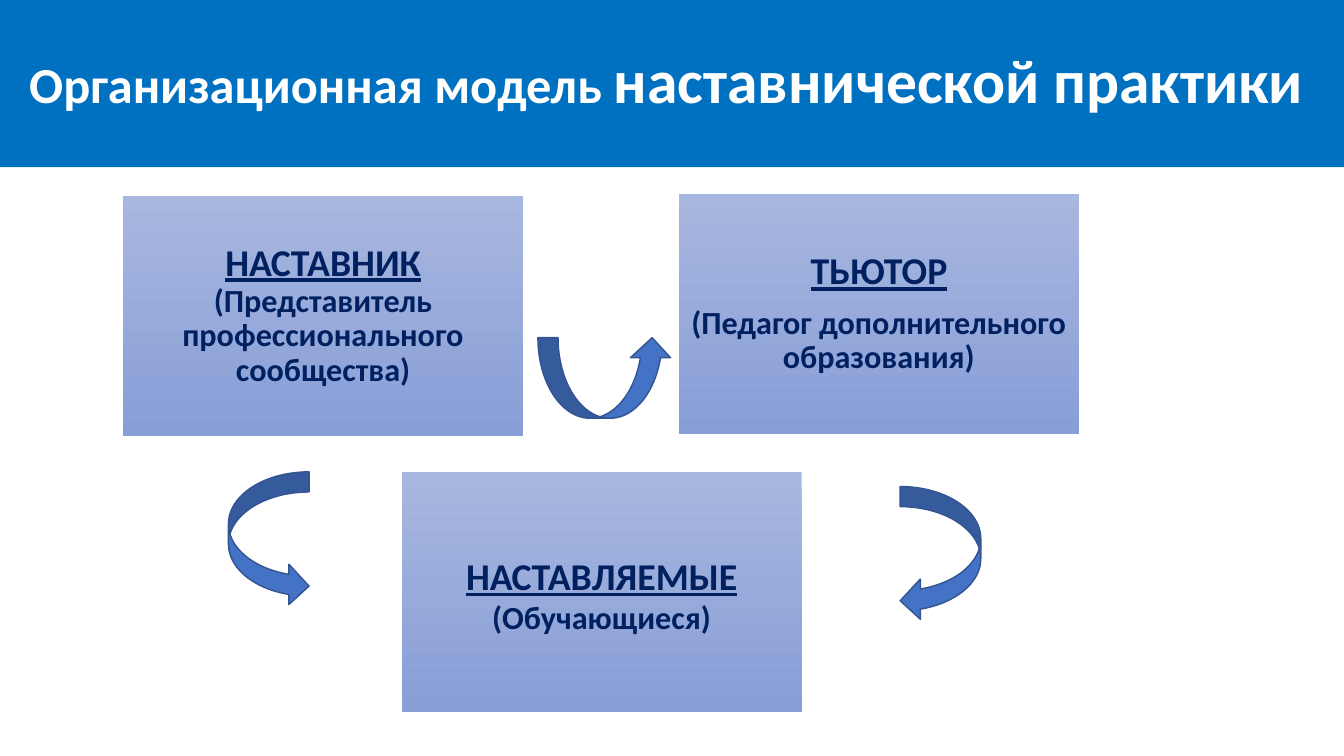
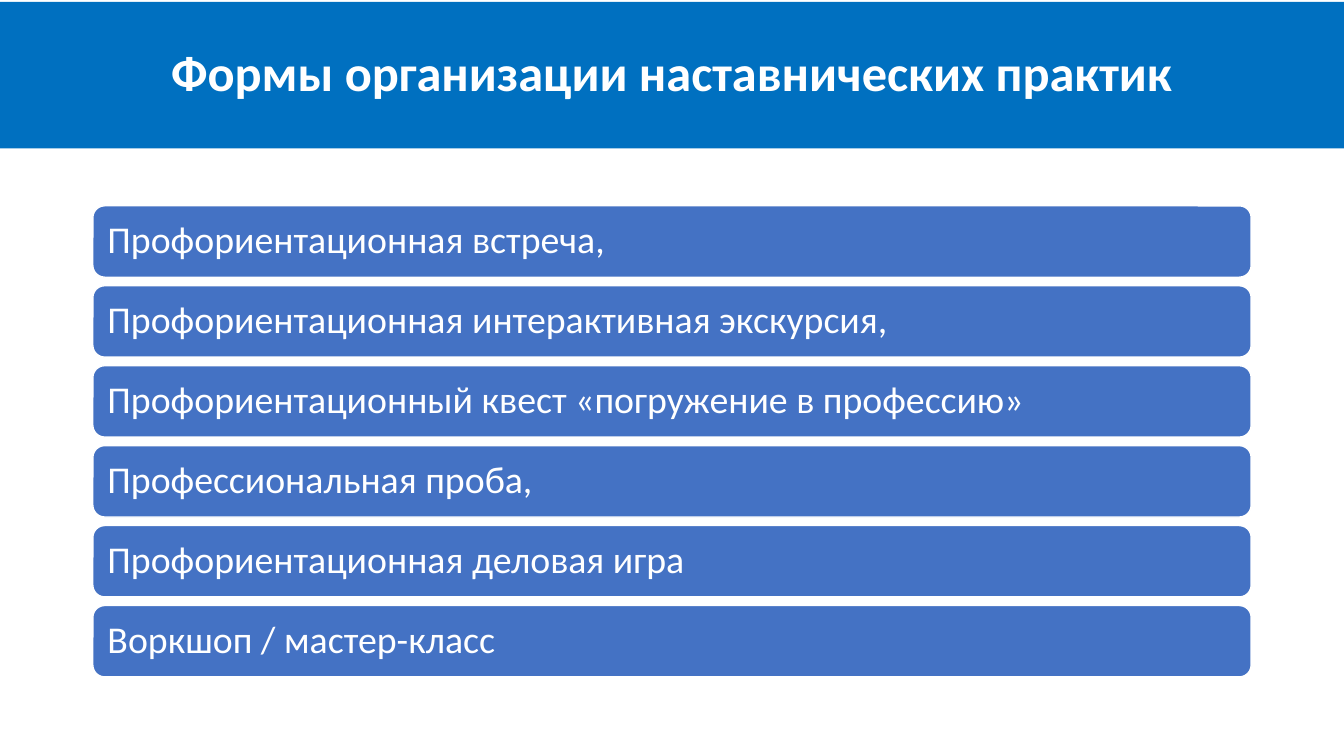
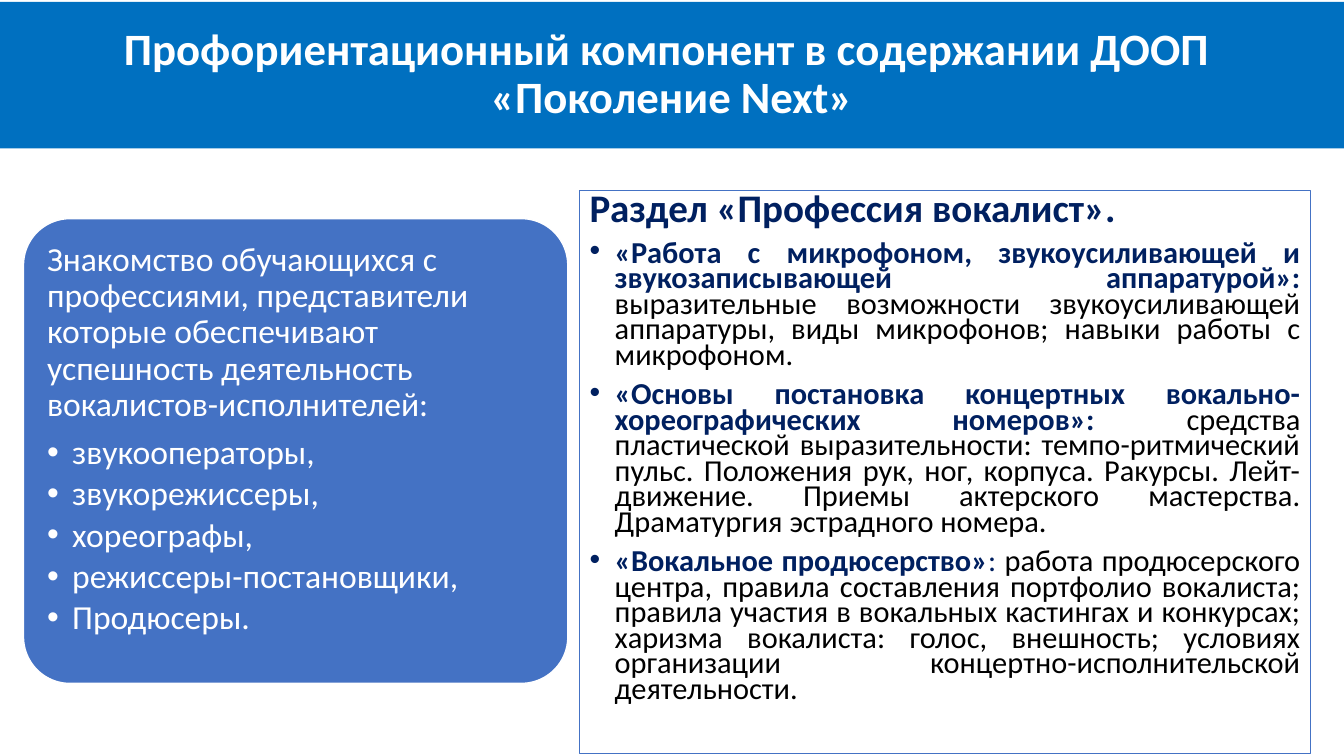
from dataclasses import dataclass

from lxml.etree import SubElement
from pptx import Presentation
from pptx.dml.color import RGBColor
from pptx.enum.shapes import MSO_SHAPE
from pptx.enum.text import MSO_ANCHOR, PP_ALIGN
from pptx.oxml.ns import qn
from pptx.util import Pt


@dataclass(frozen=True)
class Theme:
    font: str = "Calibri"
    band: str = "0070C0"
    accent: str = "4472C4"
    accent_dark: str = "325491"
    box_top: str = "A8B7DF"
    box_bottom: str = "889ED7"
    navy: str = "002060"
    white: str = "FFFFFF"
    black: str = "000000"
    title: float = 36
    title_large: float = 44
    title_small: float = 32
    heading: float = 27
    caption: float = 23
    panel: float = 24
    section: float = 27.9
    body: float = 21.7


THEME = Theme()
WIDTH, HEIGHT = 960, 540

# Content: a paragraph is a list of runs (text, font differences)
ROLE = {"size": THEME.heading, "underline": True}
NOTE = {"size": THEME.caption}
MODEL_TITLE = [
    ("Организационная модель ", {"size": THEME.title}),
    ("наставнической практики", {"size": THEME.title_large}),
    (" ", {"size": THEME.title_small}),
]
BOX_SIZE = (285.7, 171.4)
ROLE_BOXES = [
    ((88, 140), [[("НАСТАВНИК\v", ROLE),
                  ("(Представитель профессионального сообщества)", NOTE)]]),
    ((485, 138.6), [[("ТЬЮТОР", ROLE)],
                    [("(Педагог дополнительного образования)", NOTE)]]),
    ((287, 337), [[("НАСТАВЛЯЕМЫЕ", ROLE), (" ", {"size": 36}),
                   ("(Обучающиеся)", NOTE)]]),
]
ARROWS = [
    (MSO_SHAPE.CURVED_UP_ARROW, (384.2, 241.2, 96, 57.6)),
    (MSO_SHAPE.CURVED_RIGHT_ARROW, (163.2, 337, 57.6, 96)),
    (MSO_SHAPE.CURVED_LEFT_ARROW, (643, 347.5, 57.6, 96)),
]

FORMS_TITLE = [("Формы организации наставнических практик", {"size": THEME.title})]
FORMS = [
    "Профориентационная встреча,",
    "Профориентационная интерактивная экскурсия,",
    "Профориентационный квест «погружение в профессию»",
    "Профессиональная проба,",
    "Профориентационная деловая игра",
    "Воркшоп / мастер-класс",
]

PROGRAM_TITLE = [("Профориентационный компонент в содержании ДООП \v«Поколение Next»",
                  {"size": THEME.title_small})]
PROFESSIONS_INTRO = ("Знакомство обучающихся с профессиями, представители которые "
                     "обеспечивают успешность деятельность вокалистов-исполнителей:")
PROFESSIONS = ["звукооператоры,", "звукорежиссеры,", "хореографы,",
               "режиссеры-постановщики,", "Продюсеры."]
SECTION_TITLE = "Раздел «Профессия вокалист»."
TOPIC = {"bold": True}
DETAIL = {"color": THEME.black}
SECTION_TOPICS = [
    [("«Работа с микрофоном, звукоусиливающей и звукозаписывающей аппаратурой»:", TOPIC),
     (" выразительные возможности звукоусиливающей аппаратуры, виды микрофонов; "
      "навыки работы с микрофоном. ", DETAIL)],
    [("«Основы постановка концертных вокально-хореографических номеров»:", TOPIC),
     (" средства пластической выразительности: темпо-ритмический пульс. Положения рук, "
      "ног, корпуса. Ракурсы. Лейт-движение. Приемы актерского мастерства. "
      "Драматургия эстрадного номера. ", DETAIL)],
    [("«Вокальное продюсерство»", TOPIC), (":", {}),
     (" работа продюсерского центра, правила составления портфолио вокалиста; правила "
      "участия в вокальных кастингах и конкурсах; харизма вокалиста: голос, внешность; "
      "условиях организации концертно-исполнительской деятельности.", DETAIL)],
]


# Shared helpers
def style_font(font, size=None, color=None, bold=None, underline=None):
    if size is not None:
        font.size = Pt(size)
    if color is not None:
        font.color.rgb = RGBColor.from_string(color)
    if bold is not None:
        font.bold = bold
    if underline is not None:
        font.underline = underline


def add_bullet(paragraph, color, indent=18):
    properties = paragraph._p.get_or_add_pPr()
    properties.set("marL", str(Pt(indent)))
    properties.set("indent", str(-Pt(indent)))
    bullet_color = SubElement(properties, qn("a:buClr"))
    SubElement(bullet_color, qn("a:srgbClr"), val=color)
    SubElement(properties, qn("a:buFont"), typeface="Arial")
    SubElement(properties, qn("a:buChar"), char="•")


def add_block(slide, kind, place, fill=None, line=None, line_width=1):
    shape = slide.shapes.add_shape(kind, *(Pt(length) for length in place))
    shape.shadow.inherit = False
    if fill:
        shape.fill.solid()
        shape.fill.fore_color.rgb = RGBColor.from_string(fill)
    else:
        shape.fill.background()
    if line:
        shape.line.color.rgb = RGBColor.from_string(line)
        shape.line.width = Pt(line_width)
    else:
        shape.line.fill.background()
    return shape


def set_frame(shape, anchor, horizontal=7.2, vertical=3.6):
    frame = shape.text_frame
    frame.word_wrap = True
    frame.vertical_anchor = anchor
    frame.margin_left = frame.margin_right = Pt(horizontal)
    frame.margin_top = frame.margin_bottom = Pt(vertical)
    return frame


def add_paragraph(frame, runs, align=PP_ALIGN.LEFT, spacing=0.9, before=0, after=0,
                  bullet=False, color=THEME.white, **font):
    first = frame.paragraphs[0]
    paragraph = frame.add_paragraph() if first.runs else first
    paragraph.alignment = align
    paragraph.line_spacing = spacing
    paragraph.space_before, paragraph.space_after = Pt(before), Pt(after)
    if bullet:
        add_bullet(paragraph, color)
    paragraph.font.name = THEME.font
    style_font(paragraph.font, color=color, **font)
    for text, differences in runs:
        for index, part in enumerate(text.split("\v")):
            if index:
                paragraph.add_line_break()
            if part:
                run = paragraph.add_run()
                run.text = part
                style_font(run.font, **differences)


def new_slide(presentation, title, top=1.4, height=104.6):
    slide = presentation.slides.add_slide(presentation.slide_layouts[6])
    band = add_block(slide, MSO_SHAPE.RECTANGLE, (0, top, WIDTH, height), THEME.band)
    add_paragraph(set_frame(band, MSO_ANCHOR.MIDDLE), title, PP_ALIGN.CENTER, bold=True)
    return slide


# Slides
def build_model(presentation):
    slide = new_slide(presentation, MODEL_TITLE, top=0, height=119.5)
    for position, paragraphs in ROLE_BOXES:
        box = add_block(slide, MSO_SHAPE.RECTANGLE, position + BOX_SIZE)
        box.fill.gradient()
        box.fill.gradient_angle = 270
        for stop, color in zip(box.fill.gradient_stops, (THEME.box_top, THEME.box_bottom)):
            stop.color.rgb = RGBColor.from_string(color)
        frame = set_frame(box, MSO_ANCHOR.MIDDLE, 8, 8)
        for runs in paragraphs:
            add_paragraph(frame, runs, PP_ALIGN.CENTER, after=0.35 * THEME.heading,
                          color=THEME.navy, bold=True)
    for kind, place in ARROWS:
        add_block(slide, kind, place, THEME.accent, THEME.accent_dark)


def build_forms(presentation):
    slide = new_slide(presentation, FORMS_TITLE)
    left, top, height, gap = 66.3, 147, 51, 6.1
    for index, text in enumerate(FORMS):
        place = (left, top + index * (height + gap), WIDTH - 2 * left, height)
        bar = add_block(slide, MSO_SHAPE.ROUNDED_RECTANGLE, place, THEME.accent, THEME.white)
        add_paragraph(set_frame(bar, MSO_ANCHOR.MIDDLE, 8, 8), [(text, {})],
                      size=THEME.heading)


def build_program(presentation):
    slide = new_slide(presentation, PROGRAM_TITLE)

    # Section outline
    section = add_block(slide, MSO_SHAPE.RECTANGLE, (414, 136.4, 522, 402),
                        line=THEME.accent, line_width=0.75)
    frame = set_frame(section, MSO_ANCHOR.TOP)
    shared = {"spacing": 0.7, "before": 10, "color": THEME.navy}
    add_paragraph(frame, [(SECTION_TITLE, {})], size=THEME.section, bold=True, **shared)
    for runs in SECTION_TOPICS:
        add_paragraph(frame, runs, PP_ALIGN.JUSTIFY, bullet=True, size=THEME.body, **shared)

    # Professions panel
    panel = add_block(slide, MSO_SHAPE.ROUNDED_RECTANGLE, (16.8, 156.2, 388.8, 332),
                      THEME.accent, THEME.white)
    panel.adjustments[0] = 0.1
    frame = set_frame(panel, MSO_ANCHOR.TOP, 7.2, 7.2)
    add_paragraph(frame, [(PROFESSIONS_INTRO, {})], after=0.35 * THEME.panel,
                  size=THEME.panel)
    for text in PROFESSIONS:
        add_paragraph(frame, [(text, {})], after=0.15 * THEME.panel, bullet=True,
                      size=THEME.panel)


def main():
    presentation = Presentation()
    presentation.slide_width, presentation.slide_height = Pt(WIDTH), Pt(HEIGHT)
    for build in (build_model, build_forms, build_program):
        build(presentation)
    presentation.save("out.pptx")


if __name__ == "__main__":
    main()
